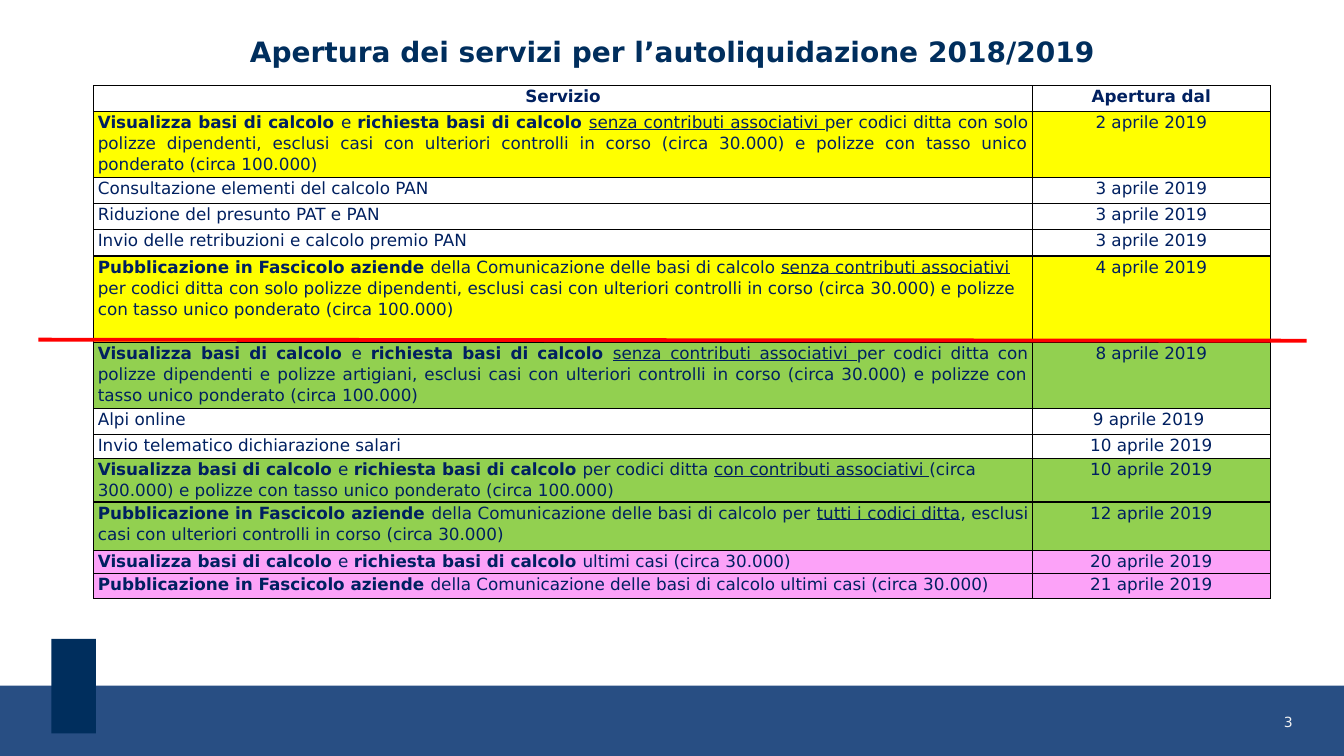
from lxml import etree
from pptx import Presentation
from pptx import util as u
from pptx.dml.color import RGBColor
from pptx.enum import shapes, text
from pptx.oxml import ns

FONT = "DejaVu Sans"
NAVY = RGBColor(0x00, 0x2E, 0x5D)
BAND_BLUE = RGBColor(0x28, 0x4E, 0x83)
TABLE_TEXT = RGBColor(0x00, 0x20, 0x60)
PALE = RGBColor(0xF2, 0xF2, 0xF2)
RED = RGBColor(0xFF, 0x00, 0x00)
BLACK = RGBColor(0x00, 0x00, 0x00)
YELLOW = RGBColor(0xFF, 0xFF, 0x00)
GREEN = RGBColor(0x92, 0xD0, 0x50)
PINK = RGBColor(0xFC, 0xA2, 0xF8)

WIDTH, HEIGHT = u.Inches(13.33), u.Inches(7.5)
LEFT, CENTER = text.PP_ALIGN.LEFT, text.PP_ALIGN.CENTER
RIGHT, JUSTIFY = text.PP_ALIGN.RIGHT, text.PP_ALIGN.JUSTIFY

BASES = "*Visualizza basi di calcolo *e *richiesta basi di calcolo *"
FILE = "*Pubblicazione in Fascicolo aziende *della Comunicazione delle basi di calcolo "
WITHOUT = "_senza contributi associativi _"
CHECKS = "esclusi casi con ulteriori controlli in corso (circa 30.000)"
RATE = "e polizze con tasso unico ponderato (circa 100.000)"

# service, opening date, fill, row height in % of the slide, alignment
SERVICES = [
    ("*Servizio*", "*Apertura dal*", None, 3.47, CENTER),
    (f"{BASES}{WITHOUT}per codici ditta con solo polizze dipendenti, {CHECKS} {RATE}",
     "2 aprile 2019", YELLOW, 8.67, JUSTIFY),
    ("Consultazione elementi del calcolo PAN", "3 aprile 2019", None, 3.47, JUSTIFY),
    ("Riduzione del presunto PAT e PAN", "3 aprile 2019", None, 3.47, JUSTIFY),
    ("Invio delle retribuzioni e calcolo premio PAN", "3 aprile 2019", None, 3.47, JUSTIFY),
    (f"{FILE}{WITHOUT}per codici ditta con solo polizze dipendenti, {CHECKS} {RATE}",
     "4 aprile 2019", YELLOW, 11.47, LEFT),
    (f"{BASES}{WITHOUT}per codici ditta con polizze dipendenti e polizze artigiani, "
     f"{CHECKS} {RATE}", "8 aprile 2019", GREEN, 8.67, JUSTIFY),
    ("Alpi online ", "9 aprile 2019 ", None, 3.47, JUSTIFY),
    ("Invio telematico dichiarazione salari", "10 aprile 2019", None, 3.2, JUSTIFY),
    (f"{BASES}per codici ditta _con contributi associativi _(circa 300.000) {RATE}",
     "10 aprile 2019", GREEN, 5.73, LEFT),
    (f"{FILE}per _tutti i codici ditta_, {CHECKS}", "12 aprile 2019", GREEN, 6.4, JUSTIFY),
    (f"{BASES}ultimi casi (circa 30.000)", "20 aprile 2019", PINK, 3.07, LEFT),
    (f"{FILE}ultimi casi (circa 30.000)", "21 aprile 2019", PINK, 3.33, JUSTIFY),
]


def across(percent):
    return u.Emu(round(WIDTH * percent / 100))


def down(percent):
    return u.Emu(round(HEIGHT * percent / 100))


def area(left, top, width, height):
    return across(left), down(top), across(width), down(height)


def write(tf, marked, size=12, color=TABLE_TEXT, align=LEFT, spacing=1.0):
    """Fill a frame; *...* marks bold and _..._ marks underlined text."""
    tf.word_wrap = True
    p = tf.paragraphs[0]
    p.alignment, p.line_spacing = align, spacing
    for i, part in enumerate(marked.split("*")):
        for j, piece in enumerate(part.split("_")):
            if not piece:
                continue
            r = p.add_run()
            r.text = piece
            r.font.name, r.font.size = FONT, u.Pt(size)
            r.font.color.rgb = color
            r.font.bold = i % 2 == 1
            r.font.underline = j % 2 == 1


def set_margins(tf, value):
    tf.margin_left = tf.margin_right = tf.margin_top = tf.margin_bottom = value


def add_block(s, color, *place):
    sp = s.shapes.add_shape(shapes.MSO_SHAPE.RECTANGLE, *area(*place))
    sp.shadow.inherit = False
    sp.fill.solid()
    sp.fill.fore_color.rgb = color
    sp.line.fill.background()


def add_title(s, words):
    sp = s.shapes.title
    sp.left, sp.top, sp.width, sp.height = area(3.83, 3.73, 92.42, 10.13)
    tf = sp.text_frame
    set_margins(tf, u.Inches(0.1))
    tf.vertical_anchor = text.MSO_ANCHOR.TOP
    tf.auto_size = text.MSO_AUTO_SIZE.NONE
    write(tf, words, size=20, color=NAVY, align=CENTER, spacing=0.9)


def add_page_number(s, number):
    tf = s.shapes.add_textbox(*area(84.25, 94.4, 11.93, 5.33)).text_frame
    set_margins(tf, 0)
    write(tf, number, size=10, color=PALE, align=RIGHT)


def add_borders(cell):
    tcPr = cell._tc.get_or_add_tcPr()
    for side in ("a:lnL", "a:lnR", "a:lnT", "a:lnB"):
        ln = etree.SubElement(tcPr, ns.qn(side), w=str(u.Pt(1)))
        fill = etree.SubElement(ln, ns.qn("a:solidFill"))
        etree.SubElement(fill, ns.qn("a:srgbClr"), val=str(BLACK))


def format_cell(cell, marked, fill, align):
    cell.margin_left = cell.margin_right = u.Inches(0.04)
    cell.margin_top = cell.margin_bottom = 0
    write(cell.text_frame, marked, align=align, spacing=1.07)
    add_borders(cell)
    if fill is None:
        cell.fill.background()
    else:
        cell.fill.solid()
        cell.fill.fore_color.rgb = fill


def add_services(s):
    widths = (69.84, 17.7)
    total = sum(row[3] for row in SERVICES)
    place = area(6.98, 11.33, sum(widths), total)
    table = s.shapes.add_table(len(SERVICES), len(widths), *place).table
    table.first_row = table.horz_banding = False
    for column, width in zip(table.columns, widths):
        column.width = across(width)
    for row, (service, date, fill, height, align) in zip(table.rows, SERVICES):
        row.height = down(height)
        format_cell(row.cells[0], service, fill, align)
        format_cell(row.cells[1], date, fill, CENTER)


def add_divider(s):
    line = s.shapes.add_connector(shapes.MSO_CONNECTOR.STRAIGHT, across(2.85),
                                  down(44.93), across(97.22), down(45.07))
    line.line.color.rgb = RED
    line.line.width = u.Pt(2.75)
    etree.SubElement(line._element.spPr, ns.qn("a:effectLst"))


def main():
    prs = Presentation()
    prs.slide_width, prs.slide_height = WIDTH, HEIGHT
    s = prs.slides.add_slide(prs.slide_layouts[5])
    add_block(s, BAND_BLUE, 0, 90.7, 100, 9.3)
    add_block(s, NAVY, 3.83, 84.5, 3.3, 12.5)
    add_title(s, "*Apertura dei servizi per l’autoliquidazione 2018/2019*")
    add_page_number(s, "3")
    add_services(s)
    add_divider(s)
    prs.save("out.pptx")


if __name__ == "__main__":
    main()
